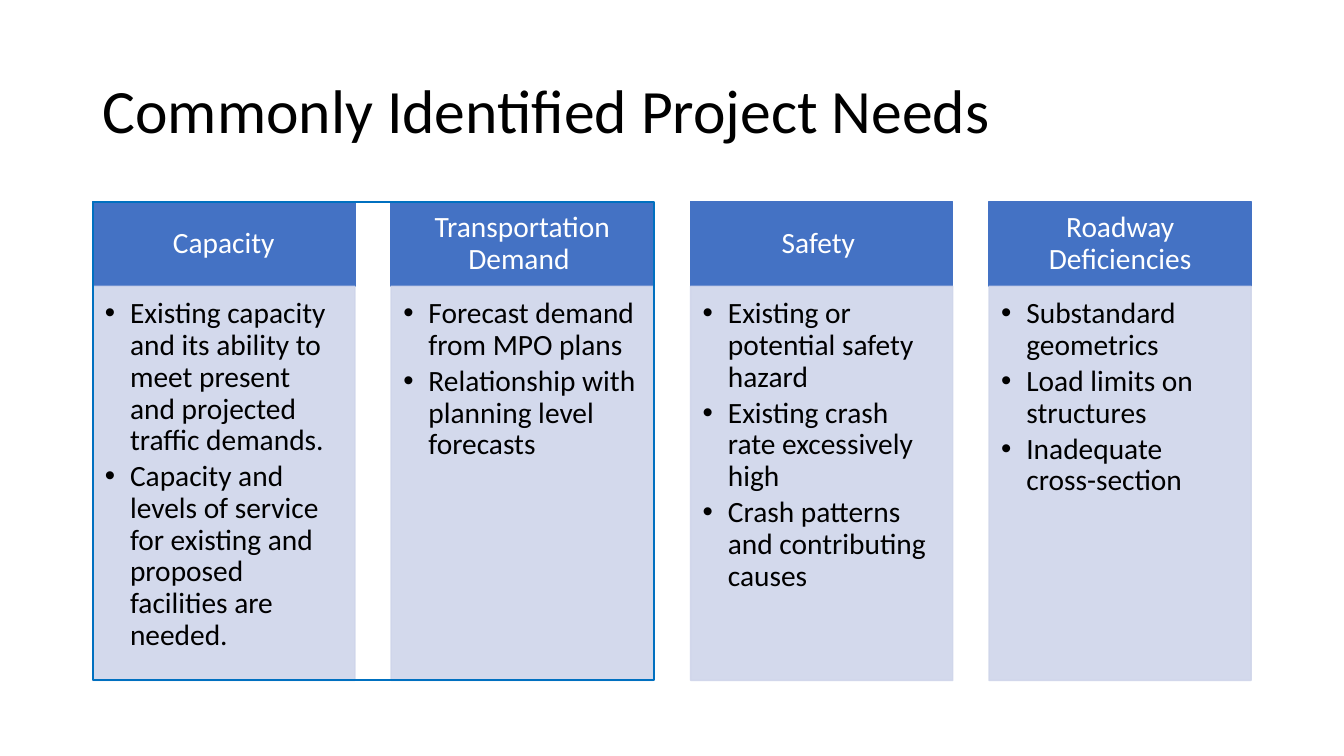
from lxml import etree
from pptx import Presentation
from pptx.dml.color import RGBColor
from pptx.enum.shapes import MSO_SHAPE
from pptx.enum.text import MSO_ANCHOR, PP_ALIGN
from pptx.oxml.ns import qn
from pptx.util import Pt

PX = 9144  # 100 px to the inch
RECTANGLE = MSO_SHAPE.RECTANGLE
TOP, MIDDLE = MSO_ANCHOR.TOP, MSO_ANCHOR.MIDDLE
LEFT, CENTER = PP_ALIGN.LEFT, PP_ALIGN.CENTER
FONT = "Calibri"
COLORS = {
    "text": "000000",
    "header": "4472C4",
    "header_text": "FFFFFF",
    "panel": "CFD5EA",
    "outline": "0070C0",
}

COLUMNS = [
    ("Capacity", [
        "Existing capacity and its ability to meet present and projected traffic demands.",
        "Capacity and levels of service for existing and proposed facilities are needed.",
    ]),
    ("Transportation Demand ", [
        "Forecast demand from MPO plans",
        "Relationship with planning level forecasts",
    ]),
    ("Safety ", [
        "Existing or potential safety hazard",
        "Existing crash rate excessively high",
        "Crash patterns and contributing causes",
    ]),
    ("Roadway Deficiencies", [
        "Substandard geometrics",
        "Load limits on structures",
        "Inadequate cross-section",
    ]),
]
COLUMN_LEFT, COLUMN_WIDTH, COLUMN_SPAN = 92, 260, 889
HEADER_TOP, HEADER_HEIGHT, PANEL_HEIGHT = 200, 84, 391
PANEL_TOP = HEADER_TOP + HEADER_HEIGHT


def add_box(left, top, width, height, line, line_width, fill=None, opacity=100):
    shape = slide.shapes.add_shape(RECTANGLE, *(v * PX for v in (left, top, width, height)))
    shape.shadow.inherit = False
    shape.line.color.rgb = RGBColor.from_string(COLORS[line])
    shape.line.width = Pt(line_width)
    if fill:
        shape.fill.solid()
        shape.fill.fore_color.rgb = RGBColor.from_string(COLORS[fill])
    else:
        shape.fill.background()
    if opacity < 100:
        for color in shape._element.spPr.iter(qn("a:srgbClr")):
            etree.SubElement(color, qn("a:alpha"), val=str(opacity * 1000))
    return shape


def write_text(shape, lines, size, color, margins, anchor, align=LEFT, bullets=False):
    frame = shape.text_frame
    frame.word_wrap = True
    frame.vertical_anchor = anchor
    for side, margin in zip(("left", "top", "right", "bottom"), margins):
        setattr(frame, f"margin_{side}", margin * PX)
    for index, line in enumerate(lines):
        paragraph = frame.add_paragraph() if index else frame.paragraphs[0]
        for name, value in {"alignment": align, "line_spacing": 0.9}.items():
            setattr(paragraph, name, value)
        if bullets:
            paragraph.space_after = Pt(3)
            properties = paragraph._p.get_or_add_pPr()
            properties.set("marL", str(25 * PX))
            properties.set("indent", str(-25 * PX))
            etree.SubElement(properties, qn("a:buFont"), typeface="Arial")
            etree.SubElement(properties, qn("a:buChar"), char="•")
        run = paragraph.add_run()
        run.text = line
        for name, value in {"name": FONT, "size": Pt(size)}.items():
            setattr(run.font, name, value)
        run.font.color.rgb = RGBColor.from_string(COLORS[color])


presentation = Presentation()
presentation.slide_width = 1333 * PX
presentation.slide_height = 750 * PX
slide = presentation.slides.add_slide(presentation.slide_layouts[6])

# Title
title = slide.shapes.add_textbox(*(v * PX for v in (92, 40, 1150, 145)))
write_text(title, ["Commonly Identified Project Needs"], 44, "text", (10, 5, 10, 5), MIDDLE)

# Columns: header above a bulleted panel
for index, (heading, needs) in enumerate(COLUMNS):
    left = COLUMN_LEFT + round(index * COLUMN_SPAN / (len(COLUMNS) - 1))
    header = add_box(left, HEADER_TOP, COLUMN_WIDTH, HEADER_HEIGHT, "header", 1, "header")
    write_text(header, [heading], 21, "header_text", (16, 9, 16, 9), MIDDLE, CENTER)
    panel = add_box(left, PANEL_TOP, COLUMN_WIDTH, PANEL_HEIGHT, "panel", 1, "panel", 90)
    write_text(panel, needs, 21, "text", (12, 12, 16, 18), TOP, bullets=True)

# Outline around the first two columns
add_box(COLUMN_LEFT, HEADER_TOP, 557, HEADER_HEIGHT + PANEL_HEIGHT, "outline", 1.5)

presentation.save("out.pptx")
